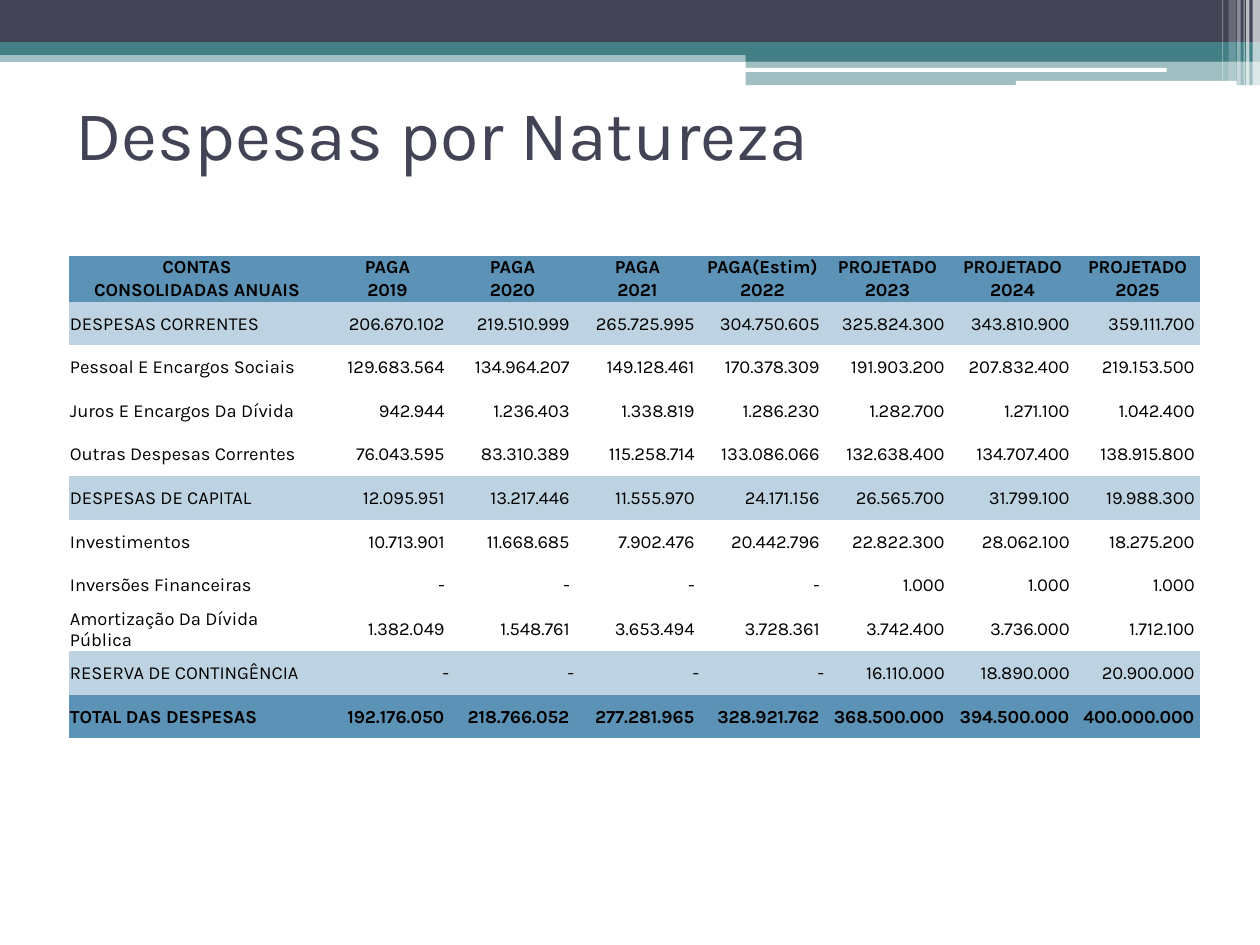
from lxml.etree import SubElement
from pptx import Presentation
from pptx.dml.color import RGBColor
from pptx.enum.shapes import MSO_SHAPE as Preset
from pptx.enum.text import MSO_ANCHOR as Anchor, PP_ALIGN as Align
from pptx.oxml.ns import qn
from pptx.util import Cm, Pt

FONT = "Karla"
INK = RGBColor(0x42, 0x44, 0x56)
TEAL = RGBColor(0x43, 0x80, 0x86)
WHITE = RGBColor(0xFF, 0xFF, 0xFF)
BLACK = RGBColor(0x00, 0x00, 0x00)
BLUE = RGBColor(0x5C, 0x92, 0xB5)
PALE_BLUE = RGBColor(0xBE, 0xD3, 0xE1)
NO_STYLE_NO_GRID = "{2D5ABB26-0587-4C30-8999-92F81FD0307C}"

prs = Presentation()
prs.slide_width, prs.slide_height = Cm(25.4), Cm(19.05)
slide = prs.slides.add_slide(prs.slide_layouts[5])


def add_band(preset, left, top, width, height, color, opacity=100):
    """Add a borderless block, measured in cm, with its opacity in percent."""
    band = slide.shapes.add_shape(preset, Cm(left), Cm(top), Cm(width), Cm(height))
    band.shadow.inherit = False
    band.line.fill.background()
    band.fill.solid()
    band.fill.fore_color.rgb = color
    if opacity < 100:
        srgb = band.element.spPr.find(f"{qn('a:solidFill')}/{qn('a:srgbClr')}")
        SubElement(srgb, qn("a:alpha"), val=str(opacity * 1000))
    return band


# Header bands
for left, top, width, height, color, opacity in [
    (0, 1.02, 25.4, 0.23, TEAL, 50),
    (0, 0, 25.4, 0.86, INK, 100),
    (0, 0.85, 25.4, 0.26, TEAL, 100),
    (15.03, 0.99, 10.37, 0.25, TEAL, 100),
    (15.03, 1.23, 10.37, 0.49, TEAL, 50),
]:
    add_band(Preset.RECTANGLE, left, top, width, height, color, opacity)

for left, top, width, height in [(15.01, 1.37, 8.51, 0.08), (20.48, 1.63, 4.45, 0.1)]:
    add_band(Preset.ROUNDED_RECTANGLE, left, top, width, height, WHITE)

# Translucent stripes at the right edge
for left, width, height, opacity in [
    (25.25, 0.15, 1.73, 65),
    (25.12, 0.07, 1.73, 65),
    (25.07, 0.02, 1.73, 60),
    (24.94, 0.07, 1.73, 40),
    (24.77, 0.15, 1.63, 20),
    (24.64, 0.02, 1.63, 30),
]:
    stripe = add_band(Preset.RECTANGLE, left, 0, width, height, WHITE, opacity)

title = slide.shapes.title
stripe.element.addnext(title.element)  # the title lies in front of the bands
title.left, title.top, title.width, title.height = Cm(1.27), Cm(1.19), Cm(22.86), Cm(2.97)
title.text_frame.text = "Despesas por Natureza"
title.text_frame.vertical_anchor = Anchor.MIDDLE
heading = title.text_frame.paragraphs[0]
heading.alignment = Align.LEFT
heading.font.name, heading.font.size = FONT, Pt(40)
heading.font.color.rgb = INK

# Expense table: (row fill, label, yearly values)
HEADER_ROWS = 2
expenses = [
    (BLUE, "CONTAS", "PAGA PAGA PAGA PAGA(Estim) PROJETADO PROJETADO PROJETADO"),
    (BLUE, "CONSOLIDADAS ANUAIS", "2019 2020 2021 2022 2023 2024 2025"),
    (PALE_BLUE, "DESPESAS CORRENTES",
     "206.670.102 219.510.999 265.725.995 304.750.605 325.824.300 343.810.900 359.111.700"),
    (None, "Pessoal E Encargos Sociais",
     "129.683.564 134.964.207 149.128.461 170.378.309 191.903.200 207.832.400 219.153.500"),
    (None, "Juros E Encargos Da Dívida",
     "942.944 1.236.403 1.338.819 1.286.230 1.282.700 1.271.100 1.042.400"),
    (None, "Outras Despesas Correntes",
     "76.043.595 83.310.389 115.258.714 133.086.066 132.638.400 134.707.400 138.915.800"),
    (PALE_BLUE, "DESPESAS DE CAPITAL",
     "12.095.951 13.217.446 11.555.970 24.171.156 26.565.700 31.799.100 19.988.300"),
    (None, "Investimentos",
     "10.713.901 11.668.685 7.902.476 20.442.796 22.822.300 28.062.100 18.275.200"),
    (None, "Inversões Financeiras", "- - - - 1.000 1.000 1.000"),
    (None, "Amortização Da Dívida Pública",
     "1.382.049 1.548.761 3.653.494 3.728.361 3.742.400 3.736.000 1.712.100"),
    (PALE_BLUE, "RESERVA DE CONTINGÊNCIA", "- - - - 16.110.000 18.890.000 20.900.000"),
    (BLUE, "TOTAL DAS DESPESAS",
     "192.176.050 218.766.052 277.281.965 328.921.762 368.500.000 394.500.000 400.000.000"),
]

frame = slide.shapes.add_table(len(expenses), 8, Cm(1.39), Cm(5.16), Cm(22.8), Cm(9.72))
frame.element.xpath(".//a:tableStyleId")[0].text = NO_STYLE_NO_GRID
table = frame.table
table.first_row = table.horz_banding = False
for index, column in enumerate(table.columns):
    column.width = Cm(2.52 if index else 5.16)

for row_index, (row_fill, label, values) in enumerate(expenses):
    is_header = row_index < HEADER_ROWS
    row = table.rows[row_index]
    row.height = Cm(0.46 if is_header else 0.88)
    for column_index, entry in enumerate([label, *values.split()]):
        cell = row.cells[column_index]
        cell.margin_left = cell.margin_right = cell.margin_top = Cm(0.02)
        cell.margin_bottom = 0
        cell.vertical_anchor = Anchor.MIDDLE
        if row_fill is None:
            cell.fill.background()
        else:
            cell.fill.solid()
            cell.fill.fore_color.rgb = row_fill

        # Amounts end in a space, except the dashes of the contingency reserve
        is_amount = column_index > 0 and not is_header
        bare_dash = entry == "-" and label == "RESERVA DE CONTINGÊNCIA"
        line = cell.text_frame.paragraphs[0]
        line.text = f"{entry} " if is_amount and not bare_dash else entry
        line.alignment = Align.CENTER if is_header else Align.RIGHT if is_amount else Align.LEFT
        font = line.runs[0].font
        font.name, font.size, font.bold = FONT, Pt(10.5), row_fill == BLUE
        font.color.rgb = BLACK

prs.save("out.pptx")
